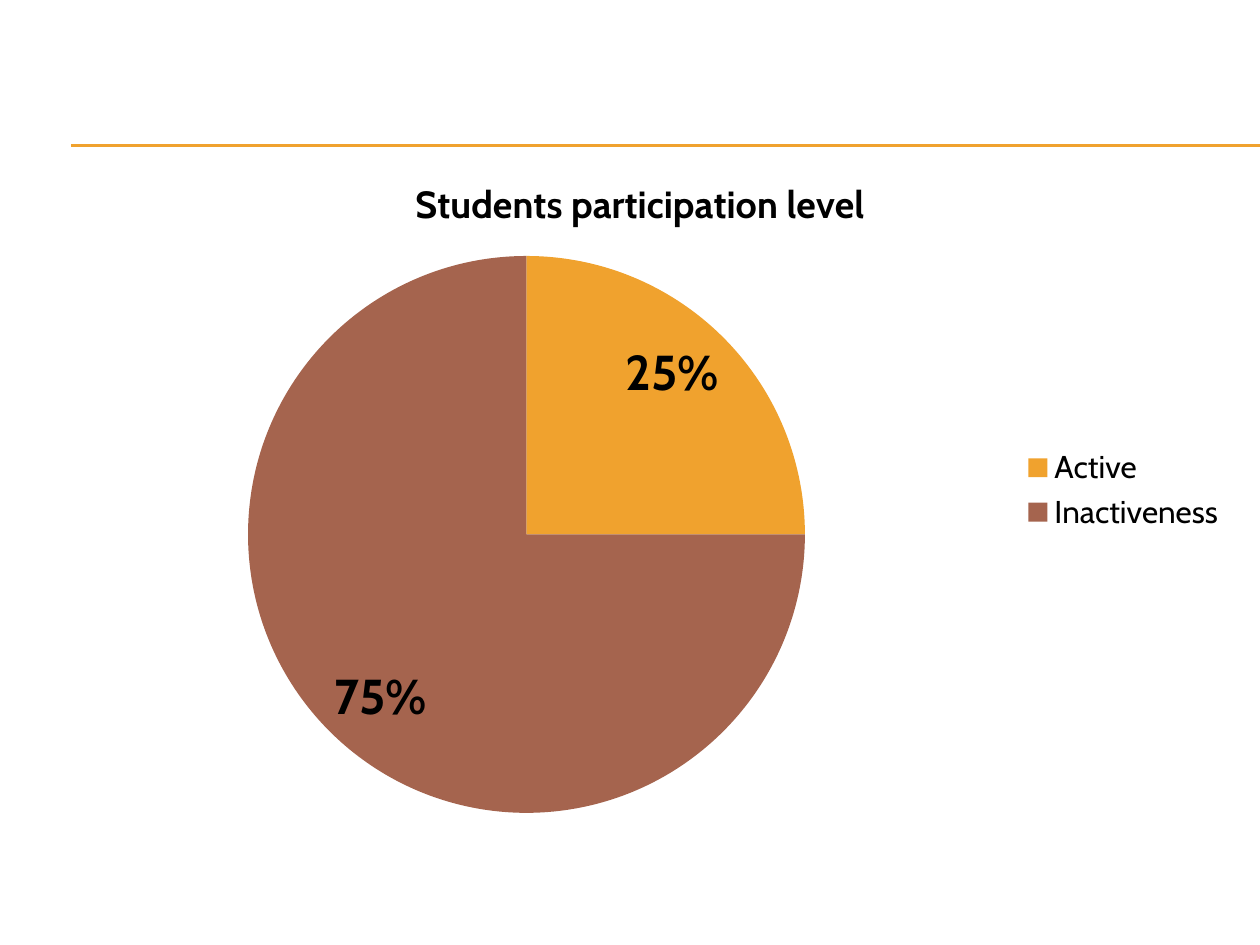
from dataclasses import dataclass

from lxml.etree import SubElement
from pptx import Presentation
from pptx.chart.data import CategoryChartData
from pptx.dml.color import RGBColor
from pptx.enum.chart import XL_CHART_TYPE, XL_LABEL_POSITION, XL_LEGEND_POSITION
from pptx.enum.shapes import MSO_CONNECTOR
from pptx.oxml import parse_xml
from pptx.oxml.ns import nsdecls, qn
from pptx.util import Pt

EMU_PER_PX = 914400 // 126


def px(length):
    return length * EMU_PER_PX


@dataclass(frozen=True)
class Theme:
    font: str = "Cabin"
    text: RGBColor = RGBColor(0x00, 0x00, 0x00)
    amber: RGBColor = RGBColor(0xF0, 0xA2, 0x2E)
    brown: RGBColor = RGBColor(0xA5, 0x64, 0x4E)
    rule_width: float = 0.75
    body_size: float = 18
    title_size: float = 21.6
    label_size: float = 28


class SlideBuilder:
    def __init__(self, slide, theme):
        self.slide = slide
        self.theme = theme

    def style(self, font, size, bold=False):
        font.name = self.theme.font
        font.size = Pt(size)
        font.bold = bold
        font.color.rgb = self.theme.text

    def rule(self, left, right, y):
        rule = self.slide.shapes.add_connector(
            MSO_CONNECTOR.STRAIGHT, px(left), px(y), px(right), px(y))
        rule.line.color.rgb = self.theme.amber
        rule.line.width = Pt(self.theme.rule_width)
        SubElement(rule._element.spPr, qn("a:effectLst"))

    def pie(self, title, shares, colors, frame, plot_frame):
        """Draw a pie; both frames are (left, top, width, height) on the slide."""
        data = CategoryChartData(number_format="General")
        data.categories = list(shares)
        data.add_series(title, list(shares.values()))
        chart = self.slide.shapes.add_chart(
            XL_CHART_TYPE.PIE, *map(px, frame), data).chart
        self.style(chart.font, self.theme.body_size)

        chart.has_title = True
        heading = chart.chart_title.text_frame.paragraphs[0].add_run()
        heading.text = title
        self.style(heading.font, self.theme.title_size, bold=True)
        chart.chart_title.include_in_layout = False

        chart.has_legend = True
        chart.legend.position = XL_LEGEND_POSITION.RIGHT
        chart.legend.include_in_layout = False
        self.style(chart.legend.font, self.theme.body_size)

        plot = chart.plots[0]
        plot.vary_by_categories = True
        for index, color in enumerate(colors):
            wedge = plot.series[0].points[index].format
            wedge.fill.solid()
            wedge.fill.fore_color.rgb = color
            wedge.line.fill.background()

        labels = plot.series[0].data_labels
        labels.show_percentage = True
        labels.show_value = False
        labels.number_format = "0%"
        labels.number_format_is_linked = False
        labels.position = XL_LABEL_POSITION.INSIDE_END
        self.style(labels.font, self.theme.label_size, bold=True)
        self.place_plot(chart, frame, plot_frame)

    def place_plot(self, chart, frame, plot_frame):
        left, top, width, height = frame
        plot_left, plot_top, plot_width, plot_height = plot_frame
        fractions = {
            "x": (plot_left - left) / width,
            "y": (plot_top - top) / height,
            "w": plot_width / width,
            "h": plot_height / height,
        }
        modes = '<c:xMode val="edge"/><c:yMode val="edge"/>'
        sizes = "".join(f'<c:{key} val="{value:.4f}"/>' for key, value in fractions.items())
        layout = parse_xml(
            f'<c:layout {nsdecls("c")}><c:manualLayout>'
            f'<c:layoutTarget val="inner"/>{modes}{sizes}'
            '</c:manualLayout></c:layout>')
        plot_area = chart._chartSpace.chart.plotArea
        for automatic in plot_area.findall(qn("c:layout")):
            plot_area.remove(automatic)
        plot_area.insert(0, layout)


def main():
    theme = Theme()
    deck = Presentation()
    deck.slide_width, deck.slide_height = px(1260), px(945)
    builder = SlideBuilder(deck.slides.add_slide(deck.slide_layouts[6]), theme)
    for y in (145, 146):
        builder.rule(71, 1260, y)
    builder.pie(
        "Students participation level",
        {"Active": 25, "Inactiveness": 75},
        (theme.amber, theme.brown),
        frame=(42, 150, 1197, 680),
        plot_frame=(248, 256, 557, 557),
    )
    deck.save("out.pptx")


if __name__ == "__main__":
    main()
